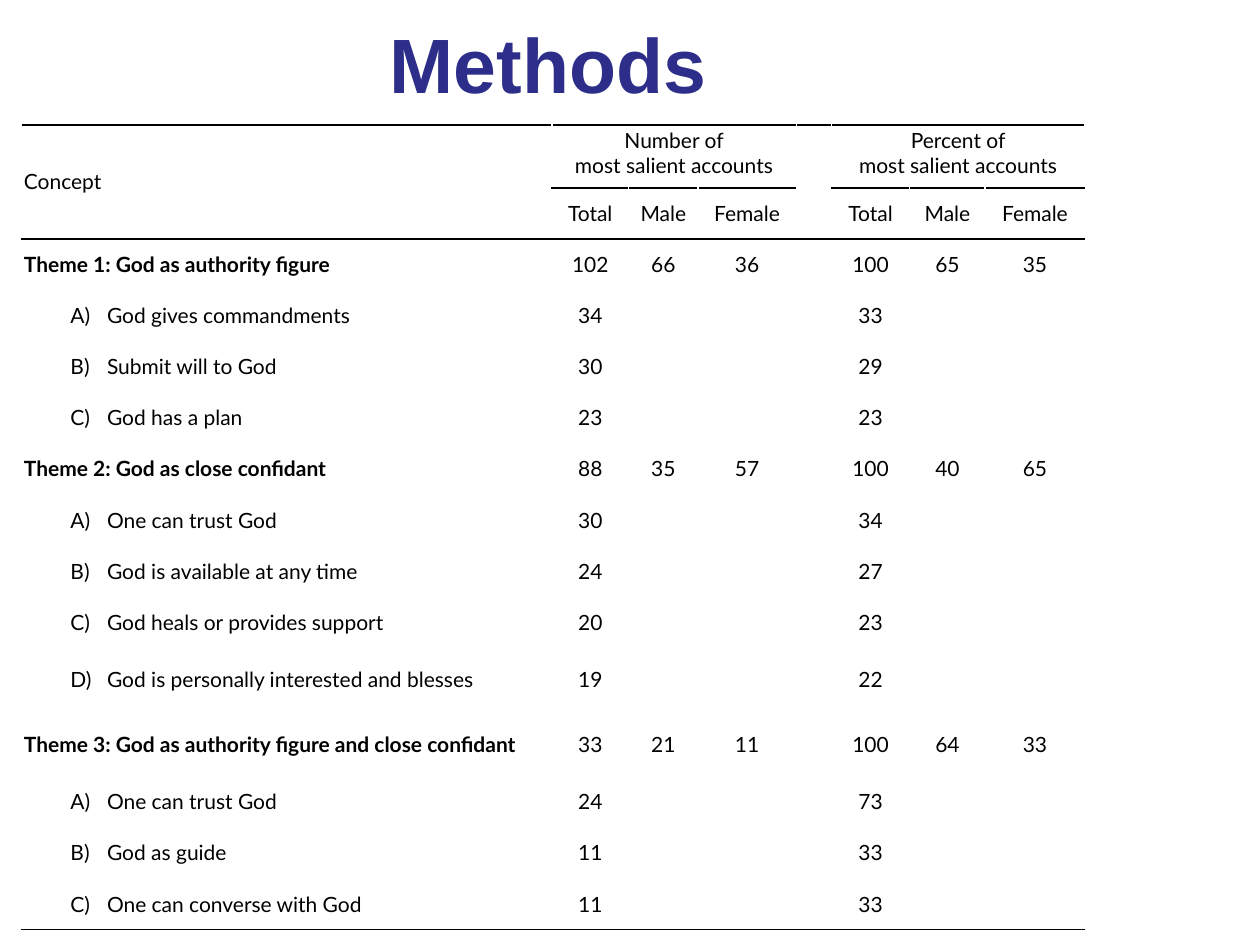
from dataclasses import dataclass
from lxml import etree
from pptx import Presentation
from pptx.dml.color import RGBColor
from pptx.enum.text import MSO_ANCHOR, MSO_AUTO_SIZE, PP_ALIGN
from pptx.oxml.ns import qn
from pptx.util import Inches, Pt

LEFT, MID = PP_ALIGN.LEFT, PP_ALIGN.CENTER
TOP, CENTER = MSO_ANCHOR.TOP, MSO_ANCHOR.MIDDLE
NO_FIT = MSO_AUTO_SIZE.NONE


@dataclass(frozen=True)
class Theme:
    head: str = "Arial"
    body: str = "Lato"
    big: int = 44
    small: int = 12
    rule: int = 1
    navy: str = "2D2D8A"
    black: str = "000000"
    white: str = "FFFFFF"


T = Theme()
TITLE = "Methods"
GROUPS = {1: "Number of\nmost salient accounts", 5: "Percent of\nmost salient accounts"}
SUBS = ("Total", "Male", "Female")
THEMES = [
    ("Theme 1: God as authority figure", (102, 66, 36), (100, 65, 35), [
        ("God gives commandments", 34, 33),
        ("Submit will to God", 30, 29),
        ("God has a plan", 23, 23)]),
    ("Theme 2: God as close confidant", (88, 35, 57), (100, 40, 65), [
        ("One can trust God", 30, 34),
        ("God is available at any time", 24, 27),
        ("God heals or provides support", 20, 23),
        ("God is personally interested and blesses", 19, 22)]),
    ("Theme 3: God as authority figure and close confidant", (33, 21, 11), (100, 64, 33), [
        ("One can trust God", 24, 73),
        ("God as guide", 11, 33),
        ("One can converse with God", 11, 33)]),
]

WIDE, HIGH = 10, 7.5
X, Y, TALL = 0.17, 0.99, 6.39
COLS = (4.21, 0.61, 0.55, 0.78, 0.28, 0.62, 0.6, 0.79)
ROOMY = {0: 0.5, 10: 0.51, 11: 0.51}
GAP = 4
TIGHT, LOOSE = (0.02, 0.02), (0.07, 0.1)
HANG, STEP = 0.66, 0.29


def put(frame, text, font=T.body, size=T.small, color=T.black, bold=False,
        align=LEFT, hang=False):
    for i, line in enumerate(text.split("\n")):
        para = frame.paragraphs[0] if i == 0 else frame.add_paragraph()
        para.alignment = align
        if hang:
            props = para._p.get_or_add_pPr()
            props.set("marL", str(Inches(HANG)))
            props.set("indent", str(-Inches(STEP)))
        run = para.add_run()
        run.text = line
        run.font.name = font
        run.font.size = Pt(size)
        run.font.bold = bold
        run.font.color.rgb = RGBColor.from_string(color)


def pad(box, x, y):
    box.margin_left = box.margin_right = Inches(x)
    box.margin_top = box.margin_bottom = Inches(y)


def edge(cell, sides):
    props = cell._tc.get_or_add_tcPr()
    for i, (side, color) in enumerate(sides):
        line = etree.Element(qn("a:ln" + side), w=str(Pt(T.rule)))
        fill = etree.SubElement(line, qn("a:solidFill"))
        etree.SubElement(fill, qn("a:srgbClr"), val=color)
        props.insert(i, line)


def tone(row, col, last):
    solid = row in (0, 2, last) or (row == 1 and col not in (0, GAP))
    return T.black if solid else T.white


def lay_out():
    rows = [["Concept"] + [""] * 7, ["", *SUBS, "", *SUBS]]
    for col, text in GROUPS.items():
        rows[0][col] = text
    heads = set()
    for name, count, share, parts in THEMES:
        heads.add(len(rows))
        rows.append([name, *count, "", *share])
        for mark, (text, num, part) in zip("ABCD", parts):
            rows.append([f"{mark})\t{text}", num, "", "", "", part, "", ""])
    return rows, heads


def add_grid(slide):
    rows, heads = lay_out()
    last = len(rows)
    table = slide.shapes.add_table(last, len(COLS), Inches(X), Inches(Y),
                                   Inches(sum(COLS)), Inches(TALL)).table
    table.first_row = table.horz_banding = False
    for col, width in zip(table.columns, COLS):
        col.width = Inches(width)
    plain = (TALL - sum(ROOMY.values())) / (last - len(ROOMY))
    for r, row in enumerate(table.rows):
        row.height = Inches(ROOMY.get(r, plain))
    table.cell(0, 0).merge(table.cell(1, 0))
    for col in GROUPS:
        table.cell(0, col).merge(table.cell(0, col + 2))
    for r, row in enumerate(rows):
        for c, value in enumerate(row):
            cell = table.cell(r, c)
            cell.fill.background()
            cell.vertical_anchor = TOP if r == 0 and c else CENTER
            roomy = r and c in (2, 3, 6, 7) and value != ""
            pad(cell, *(LOOSE if roomy else TIGHT))
            base = 2 if (r, c) == (0, 0) else r + 1
            edge(cell, (("L", T.white), ("R", T.white),
                        ("T", tone(r, c, last)), ("B", tone(base, c, last))))
            if value != "":
                put(cell.text_frame, str(value), bold=c == 0 and r in heads,
                    align=MID if c else LEFT,
                    hang=c == 0 and r > 1 and r not in heads)


def main():
    deck = Presentation()
    deck.slide_width, deck.slide_height = Inches(WIDE), Inches(HIGH)
    slide = deck.slides.add_slide(deck.slide_layouts[5])
    title = slide.shapes.title
    title.left, title.top = Inches(X), 0
    title.width, title.height = Inches(8.36), Inches(Y)
    frame = title.text_frame
    frame.word_wrap = True
    frame.auto_size = NO_FIT
    frame.vertical_anchor = CENTER
    pad(frame, 0.1, 0.1)
    put(frame, TITLE, font=T.head, size=T.big, color=T.navy, bold=True, align=MID)
    add_grid(slide)
    deck.save("out.pptx")


if __name__ == "__main__":
    main()
